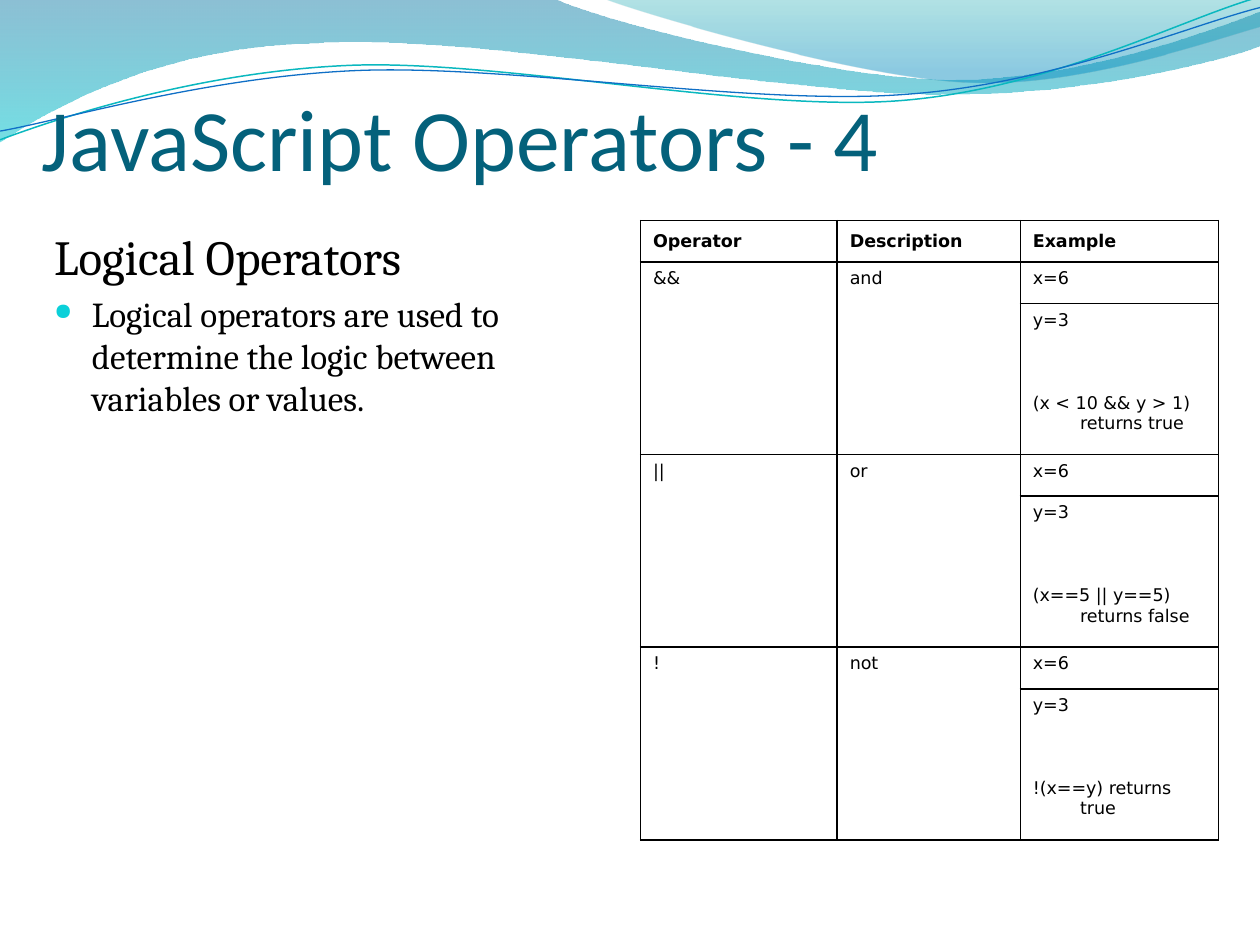
from dataclasses import dataclass

from lxml import etree
from pptx import Presentation
from pptx.dml.color import RGBColor
from pptx.enum import text
from pptx.oxml.ns import qn
from pptx.util import Pt


@dataclass(frozen=True)
class Theme:
    title: str = "04617B"
    ink: str = "000000"
    paper: str = "FFFFFF"
    bullet: str = "0BD0D9"
    title_font: str = "Calibri"
    body_font: str = "Cambria"
    table_font: str = "DejaVu Sans"
    title_size: int = 50
    heading_size: int = 28
    body_size: int = 20
    table_size: int = 10
    bullet_percent: int = 66


@dataclass(frozen=True)
class Stop:
    position: float
    color: str
    opacity: int


@dataclass(frozen=True)
class Ribbon:
    """Segments hold one end point, or two control points and an end point."""
    start: tuple
    segments: tuple
    stops: tuple = ()
    line: str = ""
    width: float = 0


@dataclass(frozen=True)
class Operator:
    symbol: str
    meaning: str
    example: str


THEME = Theme()

RIBBONS = (
    Ribbon((0, 0), (
        (316.8, -0.7),
        (342.7, 12.2, 478.1, 45.4, 545.8, 45.4),
        (614.2, 45.4, 689.8, 18.7, 720, 6.5),
        (720.7, 25.9),
        (707.8, 31.7, 626.4, 54.7, 537.1, 54),
        (447.8, 54, 275, 20.2, 185, 24.5),
        (92.9, 25.9, 33.1, 59.8, -0.7, 81.4)),
        stops=(Stop(0, "0074A1", 45), Stop(1, "00C6CF", 55))),
    Ribbon((344.9, -0.7), (
        (366.5, 7.9, 491, 44.6, 553.7, 46.8),
        (616.3, 49.7, 691.9, 23, 720, 15.1),
        (720, 0)),
        stops=(Stop(0, "00A1A9", 30), Stop(0.8, "008BBF", 45))),
    Ribbon((0, 79.9), (
        (34.6, 67, 113.8, 41, 199.4, 37.4),
        (284.4, 33.8, 427, 64.1, 513.4, 57.6),
        (599.8, 51.1, 675.4, 10.8, 718.6, -1.4)),
        line="0AB8BF", width=0.85),
    Ribbon((0, 74.9), (
        (33.8, 69.1, 118.1, 43.9, 203.8, 40.3),
        (290.2, 36.7, 429.8, 60.5, 516.2, 54),
        (601.9, 48.2, 677.5, 15.1, 720, 4.3)),
        line="0F6FC6", width=0.75),
)

HEADERS = ("Operator", "Description", "Example")
OPERATORS = (
    Operator("&&", "and", "(x < 10 && y > 1) returns true"),
    Operator("||", "or", "(x==5 || y==5) returns false"),
    Operator("!", "not", "!(x==y) returns true"),
)
COLUMN_WIDTHS = (112.4, 104.6, 113.4)
ROW_HEIGHT, RESULT_HEIGHT = 23.76, 38.8
NO_STYLE = "{2D5ABB26-0587-4C30-8999-92F81FD0307C}"


def rgb(value: str) -> RGBColor:
    return RGBColor.from_string(value)


def write(p, words: str, *, font: str, size: float, color: str = THEME.ink,
          bold: bool = False, hang: float = 0, before: float = 0,
          bullet: str = "") -> None:
    p.alignment = text.PP_ALIGN.LEFT
    p.space_before = Pt(before)
    pPr = p._p.get_or_add_pPr()
    pPr.set("marL", str(Pt(hang)))
    pPr.set("indent", str(Pt(-hang)))
    if bullet:
        clr = etree.SubElement(pPr, qn("a:buClr"))
        etree.SubElement(clr, qn("a:srgbClr"), val=THEME.bullet)
        etree.SubElement(pPr, qn("a:buSzPct"),
                         val=str(THEME.bullet_percent * 1000))
        etree.SubElement(pPr, qn("a:buChar"), char=bullet)
    if not words:
        etree.SubElement(p._p, qn("a:endParaRPr"), sz=str(size * 100))
        return
    r = p.add_run()
    r.text = words
    r.font.name, r.font.size, r.font.bold = font, Pt(size), bold
    r.font.color.rgb = rgb(color)


def bend(sp, segments: tuple) -> None:
    """Turn each three-point run of straight segments into a Bezier curve."""
    lines = iter(list(sp.element.iter(qn("a:lnTo"))))
    for seg in segments:
        run = [next(lines) for _ in range(len(seg) // 2)]
        if len(run) == 3:
            curve = etree.Element(qn("a:cubicBezTo"))
            run[0].addprevious(curve)
            for line in run:
                curve.append(line[0])
                line.getparent().remove(line)


def draw_ribbon(s, ribbon: Ribbon) -> None:
    x, y = ribbon.start
    points = [(Pt(seg[k]), Pt(seg[k + 1])) for seg in ribbon.segments
              for k in range(0, len(seg), 2)]
    builder = s.shapes.build_freeform(Pt(x), Pt(y))
    builder.add_line_segments(points, close=bool(ribbon.stops))
    sp = builder.convert_to_shape()
    bend(sp, ribbon.segments)
    sp.shadow.inherit = False
    if not ribbon.stops:
        sp.fill.background()
        sp.line.color.rgb = rgb(ribbon.line)
        sp.line.width = Pt(ribbon.width)
        return
    sp.line.fill.background()
    sp.fill.gradient()
    sp.fill.gradient_angle = 270
    for target, stop in zip(sp.fill.gradient_stops, ribbon.stops):
        target.position = stop.position
        target.color.rgb = rgb(stop.color)
    for gs, stop in zip(sp.element.iter(qn("a:gs")), ribbon.stops):
        etree.SubElement(gs[0], qn("a:alpha"), val=str(stop.opacity * 1000))


def draw_title(s) -> None:
    sp = s.shapes.title
    sp.left, sp.top, sp.width, sp.height = Pt(23.8), Pt(18), Pt(672.5), Pt(90)
    tf = sp.text_frame
    tf.auto_size = text.MSO_AUTO_SIZE.NONE
    tf.vertical_anchor = text.MSO_ANCHOR.BOTTOM
    tf.margin_left = tf.margin_right = tf.margin_bottom = 0
    write(tf.paragraphs[0], "JavaScript Operators - 4", font=THEME.title_font,
          size=THEME.title_size, color=THEME.title)
    sp.element.getparent().append(sp.element)  # in front of the ribbons


def draw_body(s) -> None:
    tf = s.shapes.add_textbox(Pt(23.8), Pt(126), Pt(330.5), Pt(354)).text_frame
    tf.word_wrap = True
    write(tf.paragraphs[0], "Logical Operators", font=THEME.body_font,
          size=THEME.heading_size, hang=21.6, before=5.6)
    write(tf.add_paragraph(), "Logical operators are used to determine the "
          "logic between variables or values.", font=THEME.body_font,
          size=THEME.body_size, hang=21.6, before=4, bullet="●")


def format_cell(cell, words: str, sides: str, header: bool) -> None:
    """Fill one cell and rule the given sides, named in the order L, R, T, B."""
    write(cell.text_frame.paragraphs[0], words, font=THEME.table_font,
          size=THEME.table_size, bold=header, hang=27)
    tcPr = cell._tc.get_or_add_tcPr()
    for side in sides:
        ln = etree.SubElement(tcPr, qn(f"a:ln{side}"), w=str(Pt(1)))
        fill = etree.SubElement(ln, qn("a:solidFill"))
        etree.SubElement(fill, qn("a:srgbClr"), val=THEME.ink)
    cell.fill.solid()
    cell.fill.fore_color.rgb = rgb(THEME.paper)
    if header:
        cell.vertical_anchor = text.MSO_ANCHOR.MIDDLE


def draw_table(s) -> None:
    rows = [(HEADERS, "LRTB", ROW_HEIGHT)]
    for op in OPERATORS:
        rows += [((op.symbol, op.meaning, "x=6"), "LRT", ROW_HEIGHT),
                 (("", "", "y=3"), "LR", ROW_HEIGHT),
                 (("", "", ""), "LR", ROW_HEIGHT),
                 (("", "", op.example), "LRB", RESULT_HEIGHT)]
    tbl = s.shapes.add_table(len(rows), len(HEADERS), Pt(366), Pt(126),
                             Pt(sum(COLUMN_WIDTHS)), Pt(354)).table
    tbl.first_row = tbl.horz_banding = False
    tbl._tbl.tblPr.find(qn("a:tableStyleId")).text = NO_STYLE
    for column, width in zip(tbl.columns, COLUMN_WIDTHS):
        column.width = Pt(width)
    for i, (words, sides, height) in enumerate(rows):
        tbl.rows[i].height = Pt(height)
        for j, word in enumerate(words):
            format_cell(tbl.cell(i, j), word, sides if j == 2 else "LRTB",
                        header=i == 0)
    for top in range(1, len(rows), 4):
        for j in (0, 1):
            tbl.cell(top, j).merge(tbl.cell(top + 3, j))


def main() -> None:
    prs = Presentation()
    prs.slide_width, prs.slide_height = Pt(720), Pt(540)
    s = prs.slides.add_slide(prs.slide_layouts[5])
    for ribbon in RIBBONS:
        draw_ribbon(s, ribbon)
    draw_title(s)
    draw_body(s)
    draw_table(s)
    prs.save("out.pptx")


if __name__ == "__main__":
    main()
